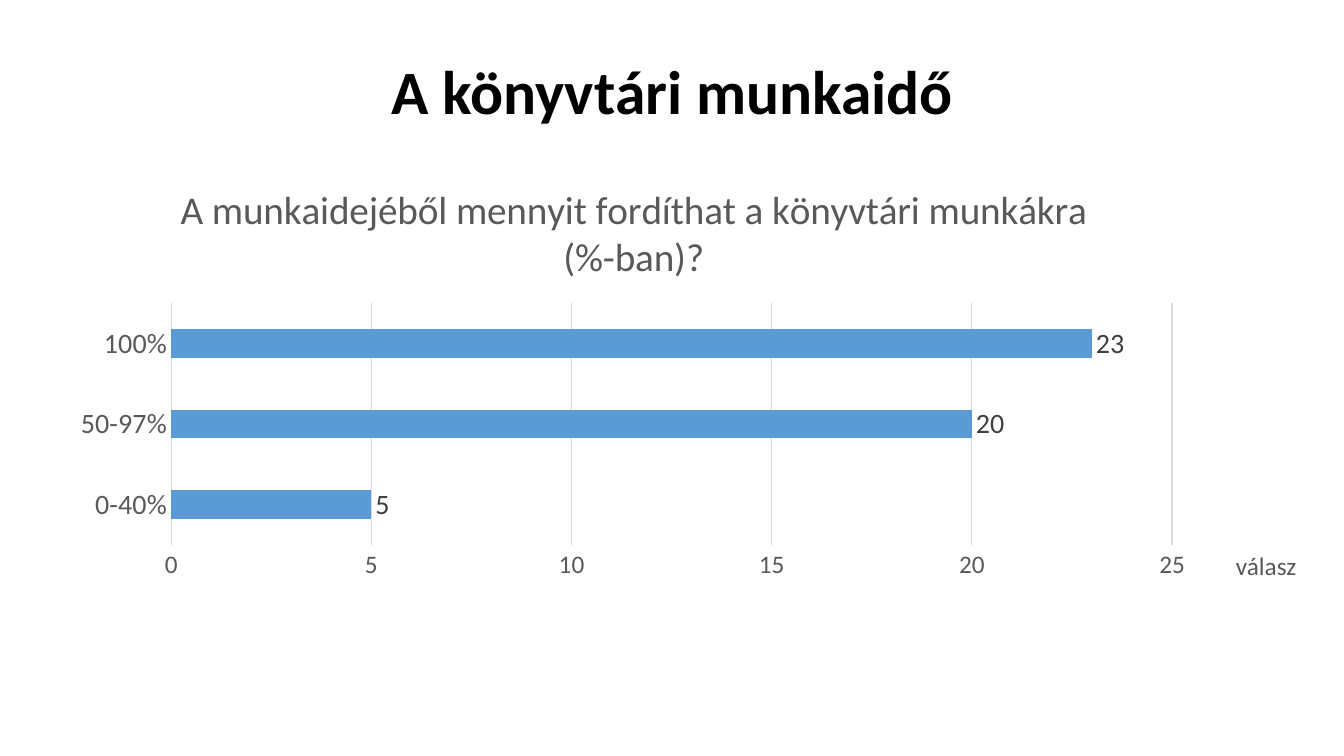
"""Build a slide with a bar chart of library working time."""
from lxml import etree
from pptx import Presentation, util as u
from pptx.chart import data as cd
from pptx.dml import color as col
from pptx.enum import chart as ch, text as tx

THEME = {
    "face": "Calibri",
    "bar": "5B9BD5",
    "grid": "D9D9D9",
    "head": {"size": 44, "color": "000000", "bold": True},
    "ask": {"size": 28, "color": "595959", "bold": False},
    "cat": {"size": 20, "color": "595959", "bold": False},
    "val": {"size": 18, "color": "595959", "bold": False},
    "mark": {"size": 20, "color": "404040", "bold": False},
}


def style(font, role):
    form = THEME[role]
    font.color.rgb = col.RGBColor.from_string(form["color"])
    for name, value in {"name": THEME["face"], "size": u.Pt(form["size"]), "bold": form["bold"]}.items():
        setattr(font, name, value)


def place(shape, *box):
    for name, value in zip(("left", "top", "width", "height"), box):
        setattr(shape, name, u.Inches(value))


deck = Presentation()
deck.slide_width, deck.slide_height = u.Inches(13.33), u.Inches(7.5)
slide = deck.slides.add_slide(deck.slide_layouts[5])

title = slide.shapes.title
place(title, 0.92, 0.4, 11.5, 1.08)
title.text_frame.text = "A könyvtári munkaidő"
title.text_frame.vertical_anchor = tx.MSO_ANCHOR.MIDDLE
head = title.text_frame.paragraphs[0]
head.alignment, head.line_spacing = tx.PP_ALIGN.CENTER, 0.9
style(head.runs[0].font, "head")

data = cd.CategoryChartData()
data.categories = ["0-40%", "50-97%", "100%"]
data.add_series("Series 1", [5, 20, 23])
box = [u.Inches(n) for n in (0.58, 1.61, 11.41, 4.23)]
chart = slide.shapes.add_chart(ch.XL_CHART_TYPE.BAR_CLUSTERED, *box, data).chart
chart.font.name, chart.font.size = THEME["face"], u.Pt(10)
chart.has_legend = False
chart.has_title = True
ask = chart.chart_title.text_frame
ask.text = "A munkaidejéből mennyit fordíthat a könyvtári munkákra (%-ban)?"
style(ask.paragraphs[0].runs[0].font, "ask")
chart.chart_title.include_in_layout = False

plot = chart.plots[0]
plot.gap_width, plot.vary_by_categories = 182, False
fill = plot.series[0].format.fill
fill.solid()
fill.fore_color.rgb = col.RGBColor.from_string(THEME["bar"])
plot.has_data_labels = True
marks = plot.data_labels
marks.show_value, marks.position = True, ch.XL_LABEL_POSITION.OUTSIDE_END
style(marks.font, "mark")

cats, vals = chart.category_axis, chart.value_axis
for axis, role in ((cats, "cat"), (vals, "val")):
    axis.major_tick_mark = axis.minor_tick_mark = ch.XL_TICK_MARK.NONE
    style(axis.tick_labels.font, role)
cats.has_major_gridlines = False
vals.has_major_gridlines = True
for line in (cats.format.line, vals.major_gridlines.format.line):
    line.color.rgb = col.RGBColor.from_string(THEME["grid"])
    line.width = u.Pt(0.75)
vals.format.line.fill.background()
vals.minimum_scale, vals.maximum_scale, vals.major_unit = 0, 25, 5

area = chart.element.chart.plotArea
space = area.tag.split("}")[0] + "}"
for old in area.findall(space + "layout"):
    area.remove(old)
frame = etree.Element(space + "layout")
area.insert(0, frame)
inner = etree.SubElement(frame, space + "manualLayout")
rules = {"layoutTarget": "inner", "xMode": "edge", "yMode": "edge",
         "x": 0.098, "y": 0.33, "w": 0.87, "h": 0.568}
for name, value in rules.items():
    etree.SubElement(inner, space + name, val=str(value))

unit = slide.shapes.add_textbox(*[u.Inches(n) for n in (12.16, 5.41, 1.03, 0.4)])
unit.text_frame.word_wrap = True
unit.text_frame.text = "válasz"
style(unit.text_frame.paragraphs[0].runs[0].font, "val")

deck.save("out.pptx")
